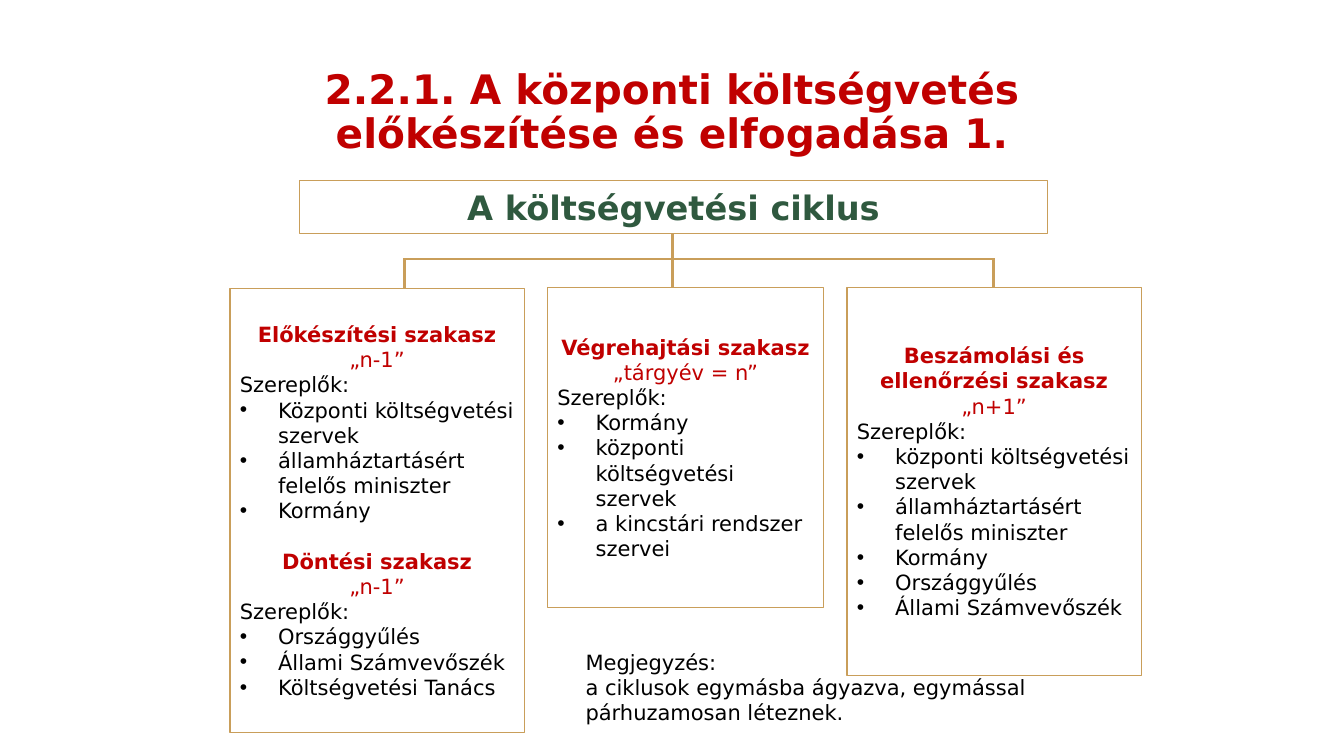
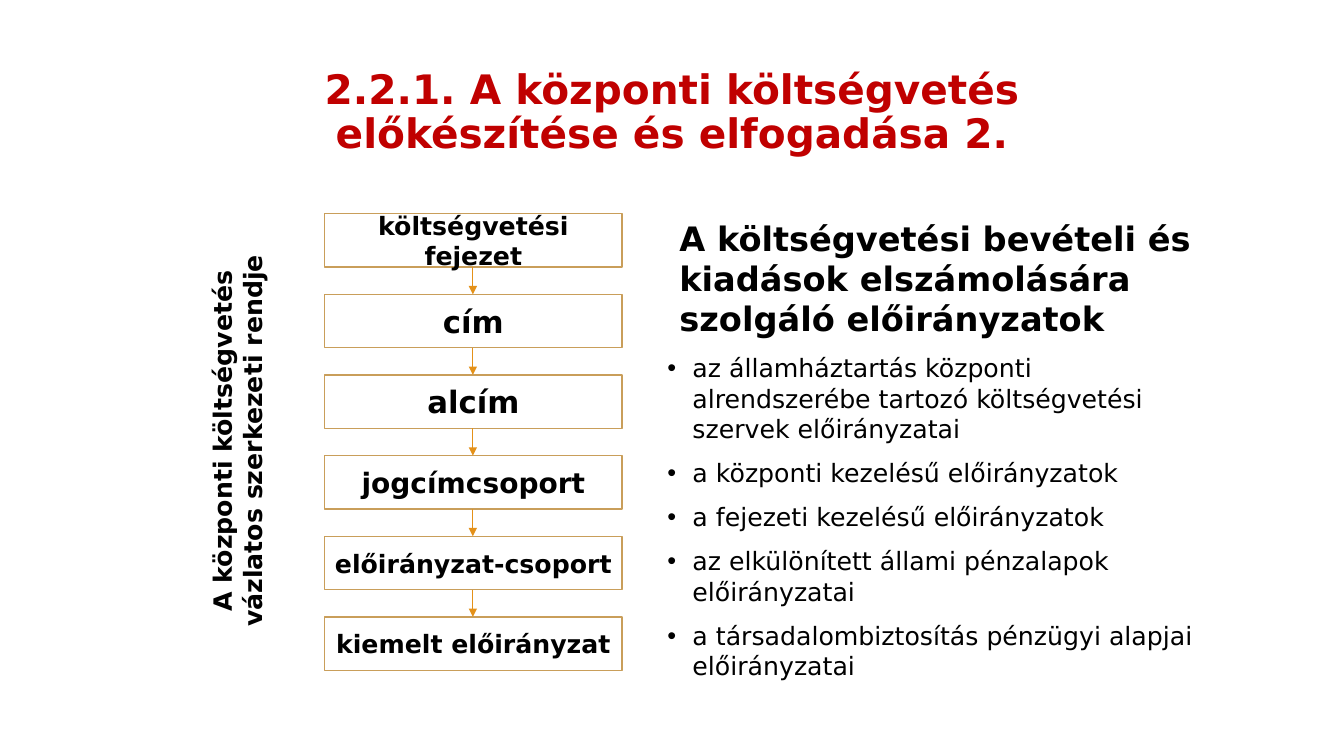
from dataclasses import dataclass

import pptx
import pptx.dml.color
import pptx.enum.shapes
import pptx.enum.text
import pptx.util
from lxml import etree
from pptx.oxml.ns import qn

RGBColor = pptx.dml.color.RGBColor
Pt = pptx.util.Pt
ALIGN = pptx.enum.text.PP_ALIGN
ANCHOR = pptx.enum.text.MSO_ANCHOR

PX = 9144  # EMU; 100 px to the inch
FONT = "DejaVu Sans"
RED = RGBColor(0xC0, 0x00, 0x00)
GREEN = RGBColor(0x2F, 0x59, 0x3F)
BLACK = RGBColor(0x00, 0x00, 0x00)
GOLD = RGBColor(0xC9, 0x9E, 0x5A)
ORANGE = RGBColor(0xE4, 0x91, 0x19)


@dataclass(frozen=True)
class Rect:
    left: int
    top: int
    width: int
    height: int

    def emu(self) -> tuple[int, ...]:
        return tuple(v * PX for v in (self.left, self.top, self.width, self.height))


@dataclass(frozen=True)
class Line:
    text: str
    size: int
    color: RGBColor = BLACK
    bold: bool = False
    align: ALIGN = ALIGN.LEFT
    before: int = 0
    indent: int = 0
    bullet: bool = False
    spacing: float = 1.0


@dataclass(frozen=True)
class Stage:
    heading: str
    period: str
    actors: tuple[str, ...]


@dataclass(frozen=True)
class PhaseBox:
    rect: Rect
    stages: tuple[Stage, ...]


@dataclass(frozen=True)
class Level:
    name: str
    size: int


PHASES = (
    PhaseBox(Rect(228, 286, 292, 441), (
        Stage("Előkészítési szakasz", "„n-1”",
              ("Központi költségvetési szervek",
               "államháztartásért felelős miniszter", "Kormány")),
        Stage("Döntési szakasz", "„n-1”",
              ("Országgyűlés", "Állami Számvevőszék", "Költségvetési Tanács")),
    )),
    PhaseBox(Rect(543, 285, 274, 318), (
        Stage("Végrehajtási szakasz", "„tárgyév = n”",
              ("Kormány", "központi költségvetési szervek",
               "a kincstári rendszer szervei")),
    )),
    PhaseBox(Rect(840, 285, 292, 385), (
        Stage("Beszámolási és ellenőrzési szakasz", "„n+1”",
              ("központi költségvetési szervek",
               "államháztartásért felelős miniszter", "Kormány",
               "Országgyűlés", "Állami Számvevőszék")),
    )),
)

LEVELS = (
    Level("költségvetési fejezet", 18),
    Level("cím", 22),
    Level("alcím", 22),
    Level("jogcímcsoport", 20),
    Level("előirányzat-csoport", 18),
    Level("kiemelt előirányzat", 18),
)

APPROPRIATIONS = (
    "az államháztartás központi alrendszerébe tartozó költségvetési szervek előirányzatai",
    "a központi kezelésű előirányzatok",
    "a fejezeti kezelésű előirányzatok",
    "az elkülönített állami pénzalapok előirányzatai",
    "a társadalombiztosítás pénzügyi alapjai előirányzatai",
)


def write_lines(box, lines: list[Line], anchor: ANCHOR) -> None:
    frame = box.text_frame
    frame.word_wrap = True
    frame.vertical_anchor = anchor
    for index, line in enumerate(lines):
        para = frame.add_paragraph() if index else frame.paragraphs[0]
        para.text = line.text
        para.alignment = line.align
        para.line_spacing = line.spacing
        para.space_before = Pt(line.before)
        properties = para._p.get_or_add_pPr()
        if line.indent:
            properties.set("marL", str(line.indent * PX))
        if line.bullet:
            properties.set("indent", str(-line.indent * PX))
            etree.SubElement(properties, qn("a:buFont"), typeface="Arial")
            etree.SubElement(properties, qn("a:buChar"), char="•")
        font = para.font
        font.name, font.size, font.bold = FONT, Pt(line.size), line.bold
        font.color.rgb = line.color


def add_text(page, rect: Rect, lines: list[Line], anchor: ANCHOR = ANCHOR.TOP):
    box = page.shapes.add_textbox(*rect.emu())
    write_lines(box, lines, anchor)
    return box


def add_frame(page, rect: Rect, lines: list[Line]) -> None:
    """Draw an unfilled gold-edged box with vertically centred text."""
    box = page.shapes.add_shape(
        pptx.enum.shapes.MSO_SHAPE.RECTANGLE, *rect.emu())
    box.shadow.inherit = False
    box.fill.background()
    box.line.color.rgb = GOLD
    box.line.width = Pt(1)
    write_lines(box, lines, ANCHOR.MIDDLE)


def add_line(page, start: tuple[int, int], end: tuple[int, int],
             color: RGBColor = GOLD, width: float = 2, arrow: bool = False) -> None:
    line = page.shapes.add_connector(
        pptx.enum.shapes.MSO_CONNECTOR.STRAIGHT,
        *(v * PX for v in (*start, *end)))
    line.line.color.rgb = color
    line.line.width = Pt(width)
    if arrow:
        etree.SubElement(line.line._get_or_add_ln(), qn("a:tailEnd"), type="triangle")
    etree.SubElement(line._element.spPr, qn("a:effectLst"))


def add_page(deck, number: int):
    """Add a blank page with the shared numbered title."""
    page = deck.slides.add_slide(deck.slide_layouts[6])
    title = f"2.2.1. A központi költségvetés\nelőkészítése és elfogadása {number}."
    add_text(page, Rect(92, 40, 1150, 145),
             [Line(title, 29, RED, True, ALIGN.CENTER, spacing=0.9)], ANCHOR.MIDDLE)
    return page


def stage_lines(stages: tuple[Stage, ...]) -> list[Line]:
    lines = []
    for index, stage in enumerate(stages):
        lines += [
            Line(stage.heading, 15, RED, True, ALIGN.CENTER, before=18 if index else 0),
            Line(stage.period, 15, RED, align=ALIGN.CENTER),
            Line("Szereplők:", 15),
            *(Line(actor, 15, indent=38, bullet=True) for actor in stage.actors),
        ]
    return lines


def build_cycle(deck) -> None:
    page = add_page(deck, 1)
    add_frame(page, Rect(297, 179, 742, 53),
              [Line("A költségvetési ciklus", 24, GREEN, True, ALIGN.CENTER)])
    for phase in PHASES:
        add_frame(page, phase.rect, stage_lines(phase.stages))

    left, middle, right, bar, phase_top = 401, 667, 985, 257, 286
    add_line(page, (left, bar), (right, bar))
    for x, top in ((left, bar - 1), (middle, 232), (right, bar - 1)):
        add_line(page, (x, top), (x, phase_top))

    add_text(page, Rect(571, 639, 537, 86), [
        Line("Megjegyzés:", 15),
        Line("a ciklusok egymásba ágyazva, egymással párhuzamosan léteznek.", 15),
    ])


def build_structure(deck) -> None:
    page = add_page(deck, 2)
    add_text(page, Rect(652, 211, 553, 484), [
        Line("A költségvetési bevételi és kiadások elszámolására szolgáló előirányzatok",
             24, bold=True, indent=12),
        *(Line(text, 18, before=10, indent=25, bullet=True) for text in APPROPRIATIONS),
    ])

    left, top, width, height, pitch = 322, 212, 295, 53, 80
    center = left + width // 2
    for index, level in enumerate(LEVELS):
        level_top = top + index * pitch
        add_frame(page, Rect(left, level_top, width, height),
                  [Line(level.name, level.size, bold=True, align=ALIGN.CENTER)])
        if index:
            add_line(page, (center, level_top - pitch + height), (center, level_top),
                     ORANGE, 0.5, arrow=True)

    side = add_text(page, Rect(200, 180, 111, 515), [
        Line("A központi költségvetés\nvázlatos szerkezeti rendje", 18,
             bold=True, align=ALIGN.CENTER)])
    side.text_frame._txBody.bodyPr.set("vert", "vert270")


def main() -> None:
    deck = pptx.Presentation()
    deck.slide_width, deck.slide_height = 1333 * PX, 750 * PX
    build_cycle(deck)
    build_structure(deck)
    deck.save("out.pptx")


if __name__ == "__main__":
    main()
